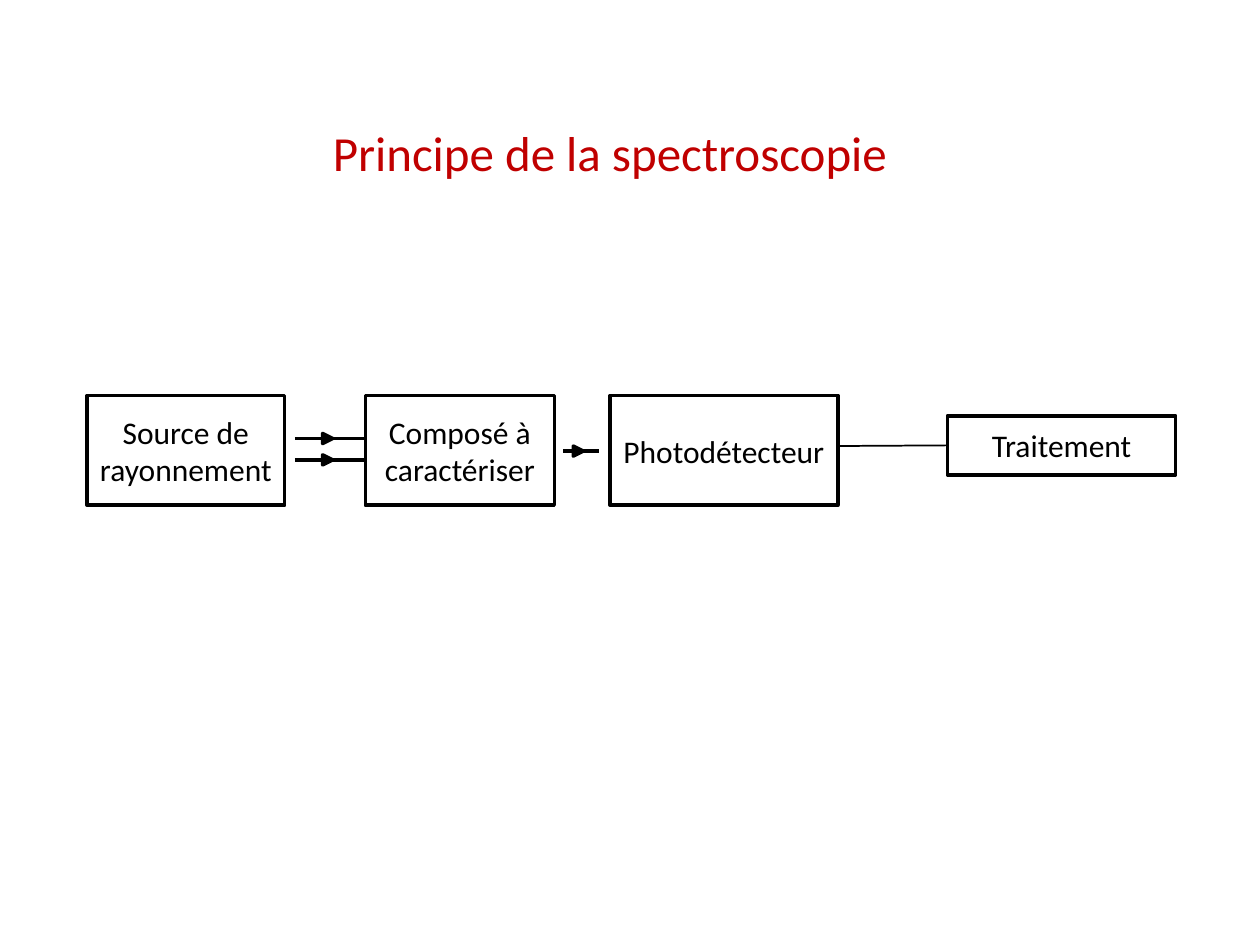
from pptx import Presentation
from pptx.dml.color import RGBColor
from pptx.enum.shapes import MSO_CONNECTOR, MSO_SHAPE
from pptx.enum.text import MSO_ANCHOR, MSO_AUTO_SIZE, PP_ALIGN
from pptx.oxml.ns import qn
from pptx.util import Inches, Pt
from lxml.etree import SubElement

HUES = {"ink": "000000", "title": "C00000"}
CELL = Inches(0.1)
COLS, ROWS = 100, 75
MARK = 0.8
STEPS = [
    (["Source de", "rayonnement"], 0, 0, 15.7, 8.7),
    (["Composé à caractériser"], 22.1, 0, 15, 8.7),
    (["Photodétecteur"], 41.5, 0, 18.1, 8.7),
    (["Traitement"], 68.3, 1.6, 18.1, 4.7),
]
RAYS = [(16.5, 22.1, 3.4, 19.1), (16.5, 22.1, 5.1, 19.1), (37.8, 40.6, 4.4, 39)]


def hue(name):
    return RGBColor.from_string(HUES[name])


def grid(*vals):
    return [round(val * CELL) for val in vals]


def style(item, **vals):
    for key, val in vals.items():
        setattr(item, key, val)


def ink(line, width):
    line.color.rgb = hue("ink")
    line.width = Pt(width)


def write(frame, lines, size, tone):
    style(frame, word_wrap=True, auto_size=MSO_AUTO_SIZE.NONE,
          vertical_anchor=MSO_ANCHOR.MIDDLE,
          margin_left=Inches(0.05), margin_right=Inches(0.05))
    frame.text = "\n".join(lines)
    for para in frame.paragraphs:
        para.alignment = PP_ALIGN.CENTER
        style(para.runs[0].font, name="Calibri", size=Pt(size))
        para.runs[0].font.color.rgb = hue(tone)


def add_head(slide, box):
    head = slide.shapes.title
    style(head, **dict(zip(("left", "top", "width", "height"), grid(*box))))
    write(head.text_frame, ["Principe de la spectroscopie"], 28, "title")


def add_step(slide, lines, box):
    step = slide.shapes.add_shape(MSO_SHAPE.RECTANGLE, *grid(*box))
    step.shadow.inherit = False
    step.fill.background()
    ink(step.line, 2)
    write(step.text_frame, lines, 18, "ink")
    return step


def add_line(slide, ends, width):
    line = slide.shapes.add_connector(MSO_CONNECTOR.STRAIGHT, *grid(*ends))
    ink(line.line, width)
    SubElement(line._element.spPr, qn("a:effectLst"))
    return line


def add_mark(slide, mid, row):
    box = grid(mid - MARK / 2, row - MARK / 2, MARK, MARK)
    mark = slide.shapes.add_shape(MSO_SHAPE.ISOSCELES_TRIANGLE, *box)
    mark.rotation = 90
    mark.shadow.inherit = False
    mark.fill.solid()
    mark.fill.fore_color.rgb = hue("ink")
    ink(mark.line, 2)


def add_chain(slide, left, top):
    steps = [add_step(slide, lines, (left + x, top + y, w, h))
             for lines, x, y, w, h in STEPS]
    for start, end, row, mid in RAYS:
        add_line(slide, (left + start, top + row, left + end, top + row), 2.25)
        add_mark(slide, left + mid, top + row)
    row = top + 4
    link = add_line(slide, (left + 59.6, row, left + 68.3, row), 1)
    link.end_connect(steps[-1], 1)


def main():
    deck = Presentation()
    style(deck, slide_width=COLS * CELL, slide_height=ROWS * CELL)
    slide = deck.slides.add_slide(deck.slide_layouts[5])
    add_head(slide, (20.5, 9.2, 55.8, 5.7))
    add_chain(slide, 6.9, 31.4)
    deck.save("out.pptx")


if __name__ == "__main__":
    main()
